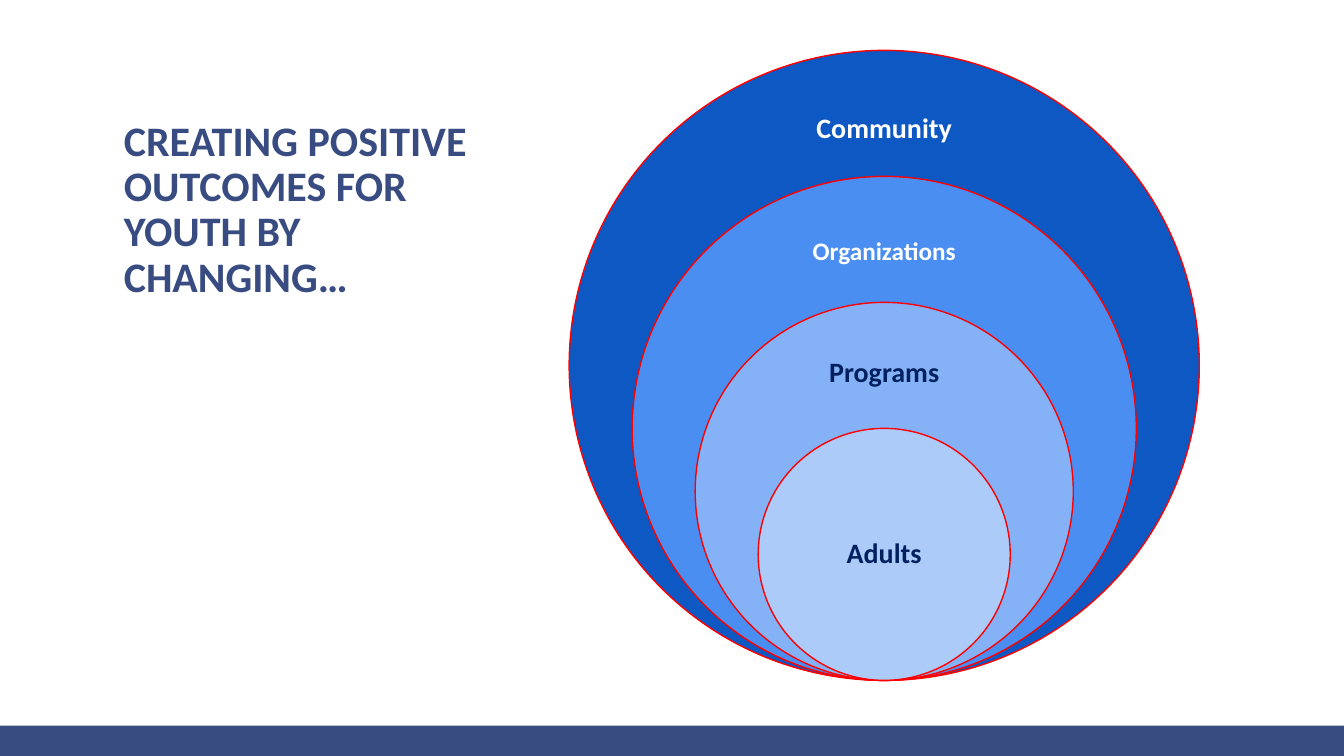
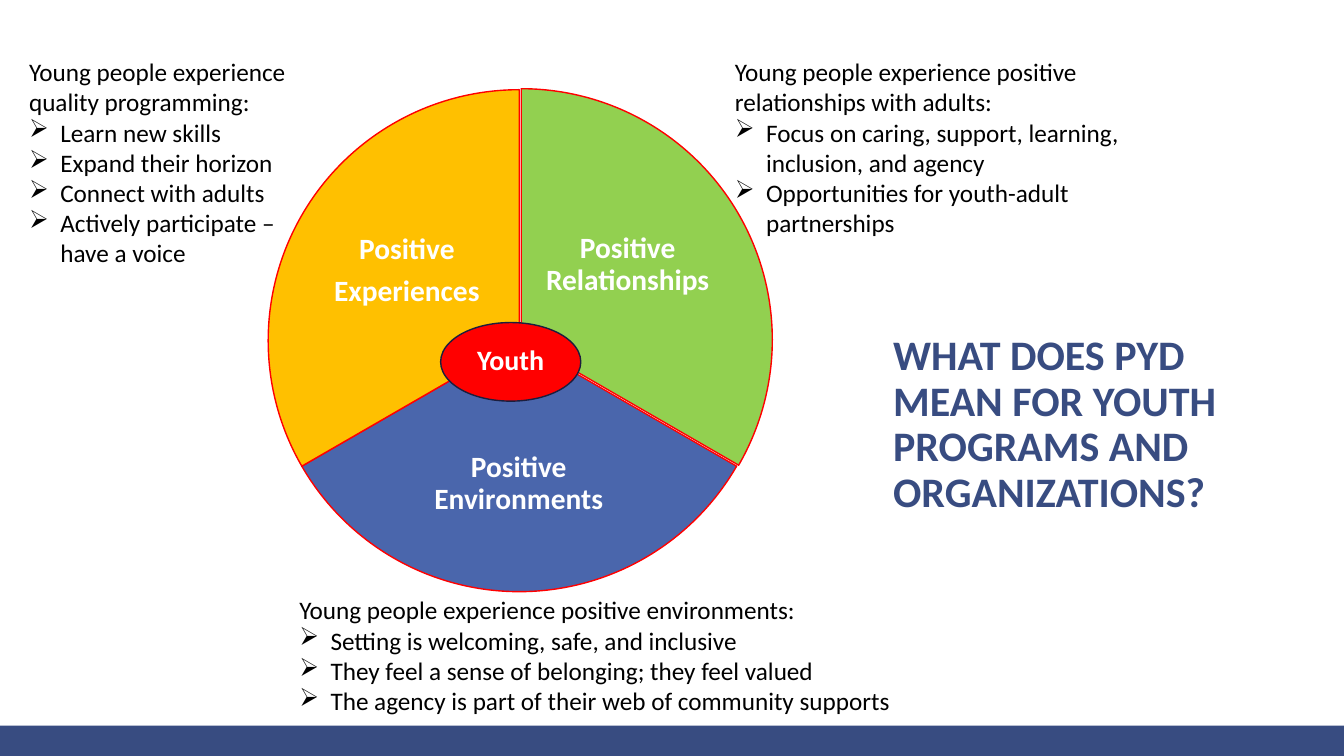
"""Build two slides on positive youth development."""
from lxml import etree
from pptx import Presentation
from pptx.dml.color import RGBColor
from pptx.enum.shapes import MSO_SHAPE
from pptx.enum.text import MSO_ANCHOR, PP_ALIGN
from pptx.oxml.ns import qn
from pptx.util import Inches, Pt

COLORS = {
    "navy": "384C81", "ink": "002060", "black": "000000", "white": "FFFFFF",
    "red": "FF0000", "outline": "1B1E3E",
    "community": "0E58C4", "organizations": "4A8EF2", "programs": "85B2F6", "adults": "ACCBF9",
    "green": "92D050", "blue": "4A66AC", "gold": "FFC000",
}
INSETS = ("margin_left", "margin_top", "margin_right", "margin_bottom")
TITLE = {
    "frame": {"vertical_anchor": MSO_ANCHOR.BOTTOM},
    "para": {"line_spacing": 0.9},
    "font": {"size": Pt(30), "bold": True},
}
LABEL = {
    "frame": {"vertical_anchor": MSO_ANCHOR.MIDDLE, **dict.fromkeys(INSETS, Inches(0.03))},
    "para": {"alignment": PP_ALIGN.CENTER, "line_spacing": 0.9, "space_after": Pt(7)},
    "font": {"size": Pt(20), "bold": True},
}
NOTE = {"frame": {}, "para": {}, "font": {"size": Pt(18)}}


def add_figure(s, kind, box, fill, line=None):
    sp = s.shapes.add_shape(kind, *map(Inches, box))
    sp.shadow.inherit = False
    sp.fill.solid()
    sp.fill.fore_color.rgb = RGBColor.from_string(COLORS[fill])
    if line:
        sp.line.color.rgb = RGBColor.from_string(COLORS[line])
        sp.line.width = Pt(1)
    else:
        sp.line.fill.background()
    return sp


def add_text(s, box, lines, style, color, size=None):
    tf = s.shapes.add_textbox(*map(Inches, box)).text_frame
    tf.word_wrap = True
    for name, value in style["frame"].items():
        setattr(tf, name, value)
    for i, line in enumerate(lines):
        p = tf.add_paragraph() if i else tf.paragraphs[0]
        for name, value in style["para"].items():
            setattr(p, name, value)
        r = p.add_run()
        r.text = line
        r.font.name = "Calibri"
        r.font.color.rgb = RGBColor.from_string(COLORS[color])
        for name, value in style["font"].items():
            setattr(r.font, name, value)
        if size:
            r.font.size = Pt(size)
    return tf


prs = Presentation()
prs.slide_width, prs.slide_height = Inches(13.33), Inches(7.5)

titles = [
    ("CREATING POSITIVE OUTCOMES FOR YOUTH BY CHANGING…", (1.13, 0.54, 4.2, 2.5)),
    ("WHAT DOES PYD MEAN FOR YOUTH PROGRAMS AND ORGANIZATIONS?", (8.76, 2.67, 3.84, 2.5)),
]
for text, box in titles:
    s = prs.slides.add_slide(prs.slide_layouts[6])
    add_figure(s, MSO_SHAPE.RECTANGLE, (0, 7.2, 13.33, 0.3), "navy")
    add_text(s, box, [text], TITLE, "navy")
levels_slide, pyd_slide = prs.slides

center_x, base_y, step = 8.77, 6.75, 1.25
levels = [
    ("Community", "community", "white", 20, 1.28),
    ("Organizations", "organizations", "white", 18, 2.5),
    ("Programs", "programs", "ink", 20, 3.7),
    ("Adults", "adults", "ink", 20, 5.5),
]
for i, (text, fill, color, size, label_y) in enumerate(levels):
    d = step * (5 - i)
    add_figure(levels_slide, MSO_SHAPE.OVAL, (center_x - d / 2, base_y - d, d, d), fill, "red")
    add_text(levels_slide, (center_x - 1, label_y - 0.45, 2, 0.9), [text], LABEL, color, size)

sectors = [
    (["Positive Relationships"], "green", (2.68, 0.88), (162, 18), (5.38, 1.8, 1.69, 1.66)),
    (["Positive Environments"], "blue", (2.66, 0.89), (18, 90), (4.02, 4.03, 2.25, 1.54)),
    (["Positive", "Experiences"], "gold", (2.66, 0.89), (90, 162), (3.19, 1.86, 1.69, 1.66)),
]
for lines, fill, corner, angles, box in sectors:
    sp = add_figure(pyd_slide, MSO_SHAPE.PIE, (*corner, 4.98, 4.98), fill, "red")
    sp.adjustments[0], sp.adjustments[1] = angles
    add_text(pyd_slide, box, lines, LABEL, "white", 21)

notes = [
    ((7.19, 0.51, 4.44, 1.92), [
        "Young people experience positive relationships with adults:",
        "Focus on caring, support, learning, inclusion, and agency",
        "Opportunities for youth-adult partnerships",
    ]),
    ((0.19, 0.51, 2.87, 2.22), [
        "Young people experience quality programming:",
        "Learn new skills",
        "Expand their horizon",
        "Connect with adults",
        "Actively participate – have a voice",
    ]),
    ((2.87, 5.85, 9.76, 1.31), [
        "Young people experience positive environments:",
        "Setting is welcoming, safe, and inclusive",
        "They feel a sense of belonging; they feel valued",
        "The agency is part of their web of community supports",
    ]),
]
for box, lines in notes:
    tf = add_text(pyd_slide, box, lines, NOTE, "black")
    for p in tf.paragraphs[1:]:
        pPr = p._p.get_or_add_pPr()
        pPr.set("marL", str(Inches(0.31)))
        pPr.set("indent", str(-Inches(0.31)))
        etree.SubElement(pPr, qn("a:buChar")).set("char", "➢")

youth = (4.37, 3.2, 1.39, 0.78)
add_figure(pyd_slide, MSO_SHAPE.OVAL, youth, "red", "outline")
add_text(pyd_slide, youth, ["Youth"], LABEL, "white")

prs.save("out.pptx")
